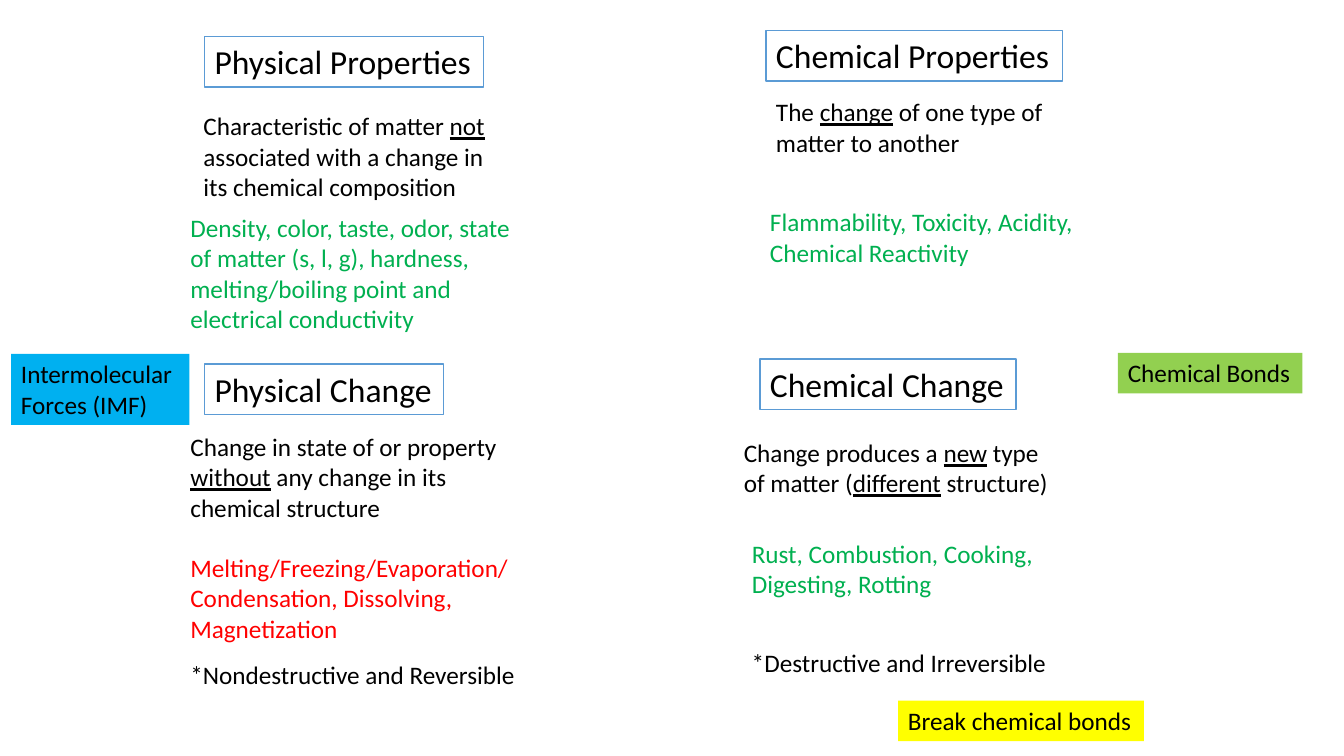
from dataclasses import dataclass
from typing import Optional

from pptx import Presentation
from pptx.dml.color import RGBColor
from pptx.enum.text import MSO_ANCHOR, MSO_AUTO_SIZE, PP_ALIGN
from pptx.slide import Slide
from pptx.util import Pt


@dataclass(frozen=True)
class Theme:
    font: str = "Calibri"
    head: float = 24
    body: float = 18
    pad: float = 7.27
    lead: float = 1.21
    edge: float = 1
    black: str = "000000"
    white: str = "FFFFFF"
    blue: str = "5B9BD5"
    green: str = "00B050"
    red: str = "FF0000"
    lime: str = "92D050"
    sky: str = "00B0F0"
    yellow: str = "FFFF00"


THEME = Theme()


@dataclass(frozen=True)
class Box:
    text: str
    left: float
    top: float
    width: float
    rows: int = 1
    size: float = THEME.body
    color: str = THEME.black
    fill: Optional[str] = None
    line: Optional[str] = None
    wrap: bool = True


def title(text: str, left: float, top: float, width: float) -> Box:
    return Box(text, left, top, width, size=THEME.head,
               fill=THEME.white, line=THEME.blue, wrap=False)


def note(text: str, left: float, top: float, rows: int) -> Box:
    return Box(text, left, top, 234, rows)


def sample(text: str, left: float, top: float, rows: int,
           width: float = 255.6, color: str = THEME.green,
           fill: Optional[str] = None) -> Box:
    return Box(text, left, top, width, rows, color=color, fill=fill)


def label(text: str, left: float, top: float, width: float,
          fill: Optional[str] = None, rows: int = 1) -> Box:
    return Box(text, left, top, width, rows, fill=fill, wrap=False)


BOXES = [
    title("Physical Properties", 146.2, 25.9, 199.4),
    title("Chemical Properties", 547.2, 21.6, 211.7),
    note("Characteristic of matter _not_ associated with a change in "
         "its chemical composition", 138.2, 75.6, 3),
    note("Change in state of or property _without_ any change in its "
         "chemical structure", 128.9, 304.6, 3),
    title("Physical Change", 146.2, 259.9, 170.6),
    sample("Density, color, taste, odor, state of matter (s, l, g), hardness, "
           "melting/boiling point and electrical conductivity",
           128.9, 148.3, 4),
    sample("Melting/Freezing/Evaporation/Condensation, Dissolving, "
           "Magnetization", 128.9, 391, 2, 283.7, THEME.red),
    note("The _change_ of one type of matter to another", 547.2, 65.5, 2),
    sample("Flammability, Toxicity, Acidity, Chemical Reactivity",
           542.9, 144, 2),
    title("Chemical Change", 542.9, 256.3, 182.9),
    note("Change produces a _new_ type of matter (_different_ structure)",
         524.2, 308.9, 2),
    sample("Rust, Combustion, Cooking, Digesting, Rotting",
           529.9, 380.9, 2, fill=THEME.white),
    label("*Nondestructive and Reversible", 128.9, 467.3, 247.7),
    label("*Destructive and Irreversible", 529.9, 458.6, 227.5),
    label("Break chemical bonds", 641.5, 500.4, 175.7, THEME.yellow),
    label("Chemical Bonds", 798.5, 252, 131.8, THEME.lime),
    label("Intermolecular\nForces (IMF)", 7.9, 252.7, 127.4, THEME.sky, 2),
]


def draw(slide: Slide, box: Box) -> None:
    high = THEME.pad + THEME.lead * box.size * box.rows
    shape = slide.shapes.add_textbox(
        Pt(box.left), Pt(box.top), Pt(box.width), Pt(high))
    if box.fill:
        shape.fill.solid()
        shape.fill.fore_color.rgb = RGBColor.from_string(box.fill)
    if box.line:
        shape.line.color.rgb = RGBColor.from_string(box.line)
        shape.line.width = Pt(THEME.edge)
    frame = shape.text_frame
    form = {"word_wrap": box.wrap, "vertical_anchor": MSO_ANCHOR.TOP,
            "auto_size": MSO_AUTO_SIZE.SHAPE_TO_FIT_TEXT}
    for key, value in form.items():
        setattr(frame, key, value)
    for row, text in enumerate(box.text.split("\n")):
        para = frame.add_paragraph() if row else frame.paragraphs[0]
        para.alignment = PP_ALIGN.LEFT
        for part, words in enumerate(text.split("_")):
            run = para.add_run()
            run.text = words
            style = {"name": THEME.font, "size": Pt(box.size),
                     "underline": part % 2 == 1}
            for key, value in style.items():
                setattr(run.font, key, value)
            run.font.color.rgb = RGBColor.from_string(box.color)


def main() -> None:
    deck = Presentation()
    deck.slide_width, deck.slide_height = Pt(960), Pt(540)
    slide = deck.slides.add_slide(deck.slide_layouts[6])
    for box in BOXES:
        draw(slide, box)
    deck.save("out.pptx")


if __name__ == "__main__":
    main()
